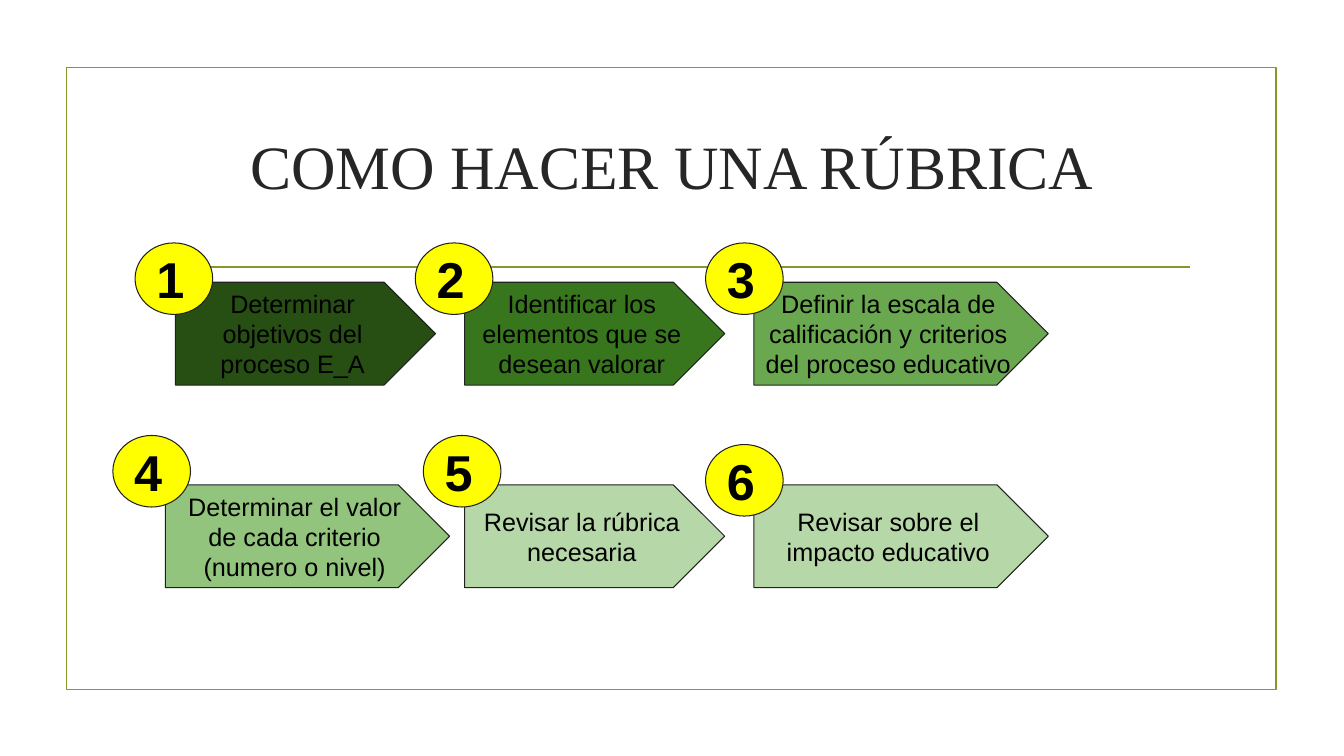
from pptx import Presentation
from pptx.dml.color import RGBColor
from pptx.enum.shapes import MSO_CONNECTOR, MSO_SHAPE
from pptx.enum.text import MSO_ANCHOR, PP_ALIGN
from pptx.oxml.ns import qn
from pptx.util import Pt
from lxml import etree

RECT, PLATE, OVAL = MSO_SHAPE.RECTANGLE, MSO_SHAPE.PENTAGON, MSO_SHAPE.OVAL
STRAIGHT = MSO_CONNECTOR.STRAIGHT
MIDDLE = MSO_ANCHOR.MIDDLE
LEFT, CENTER = PP_ALIGN.LEFT, PP_ALIGN.CENTER

OLIVE = RGBColor(0x83, 0x99, 0x2A)
INK = RGBColor(0x26, 0x26, 0x26)
EDGE = RGBColor(0x21, 0x21, 0x21)
BLACK = RGBColor(0, 0, 0)
YELLOW = RGBColor(0xFF, 0xFF, 0)
FOREST = RGBColor(0x27, 0x4E, 0x13)
GREEN = RGBColor(0x38, 0x76, 0x1D)
LEAF = RGBColor(0x6A, 0xA8, 0x4F)
SAGE = RGBColor(0x93, 0xC4, 0x7D)
MINT = RGBColor(0xB6, 0xD7, 0xA8)

# Row tops and shape sizes
TOP, LOW = 201.6, 346.32
STEP_H = 73.44
DOT_W, DOT_H = 55.44, 51.12

# Step: text, fill, left, top, width, dot left, dot top
STEPS = [
    ("Determinar objetivos del proceso E_A",
     FOREST, 125.28, TOP, 185.76, 96.48, 173.52),
    ("Identificar los elementos que se desean valorar",
     GREEN, 331.92, TOP, 185.76, 296.64, 173.52),
    ("Definir la escala de calificación y criterios del proceso educativo",
     LEAF, 538.56, TOP, 210.24, 504, 173.52),
    ("Determinar el valor de cada criterio (numero o nivel)",
     SAGE, 118.08, LOW, 203.04, 80.64, 311.04),
    ("Revisar la rúbrica necesaria",
     MINT, 331.92, LOW, 185.76, 302.4, 311.04),
    ("Revisar sobre el impacto educativo",
     MINT, 538.56, LOW, 210.24, 504, 317.52),
]


class Board:
    """Style and current slide."""
    sans, serif = "Arial", "Times New Roman"

    def __init__(self, slide):
        self.shapes = slide.shapes

    def label(self, shape, text, size, face, color, align=CENTER, bold=False):
        frame = shape.text_frame
        frame.word_wrap = True
        frame.vertical_anchor = MIDDLE
        frame.margin_left = frame.margin_right = Pt(7.2)
        frame.margin_top = frame.margin_bottom = Pt(7.2)
        para = frame.paragraphs[0]
        para.text = text
        para.alignment = align
        font = para.font
        font.size, font.name, font.bold = Pt(size), face, bold
        font.color.rgb = color

    def shape(self, kind, x, y, w, h, fill=None, edge=EDGE, weight=0.75):
        item = self.shapes.add_shape(kind, Pt(x), Pt(y), Pt(w), Pt(h))
        item.shadow.inherit = False
        if fill is None:
            item.fill.background()
        else:
            item.fill.solid()
            item.fill.fore_color.rgb = fill
        item.line.color.rgb = edge
        item.line.width = Pt(weight)
        return item

    def rule(self, x, y, end):
        line = self.shapes.add_connector(STRAIGHT, Pt(x), Pt(y), Pt(end), Pt(y))
        line.line.color.rgb = OLIVE
        line.line.width = Pt(1.25)
        etree.SubElement(line._element.spPr, qn("a:effectLst"))

    def title(self, text, x, y, w, h):
        box = self.shapes.add_textbox(Pt(x), Pt(y), Pt(w), Pt(h))
        self.label(box, text, 44, self.serif, INK)

    def step(self, text, fill, x, y, w):
        plate = self.shape(PLATE, x, y, w, STEP_H, fill)
        self.label(plate, text, 18, self.sans, BLACK)

    def dot(self, num, x, y):
        disc = self.shape(OVAL, x, y, DOT_W, DOT_H, YELLOW)
        self.label(disc, str(num), 36, self.sans, BLACK, LEFT, True)


def main():
    deck = Presentation()
    deck.slide_width, deck.slide_height = Pt(960), Pt(540)
    board = Board(deck.slides.add_slide(deck.slide_layouts[6]))

    # Frame, rule and title
    board.shape(RECT, 47.52, 48.24, 864, 444.24, edge=OLIVE, weight=1.25)
    board.rule(110.16, 190.8, 850.32)
    board.title("COMO HACER UNA RÚBRICA", 102.24, 77.04, 756, 81.36)

    # Arrow plates, then the numbers on top
    for text, fill, x, y, w, *_ in STEPS:
        board.step(text, fill, x, y, w)
    for num, (*_, x, y) in enumerate(STEPS, 1):
        board.dot(num, x, y)

    deck.save("out.pptx")


if __name__ == "__main__":
    main()
